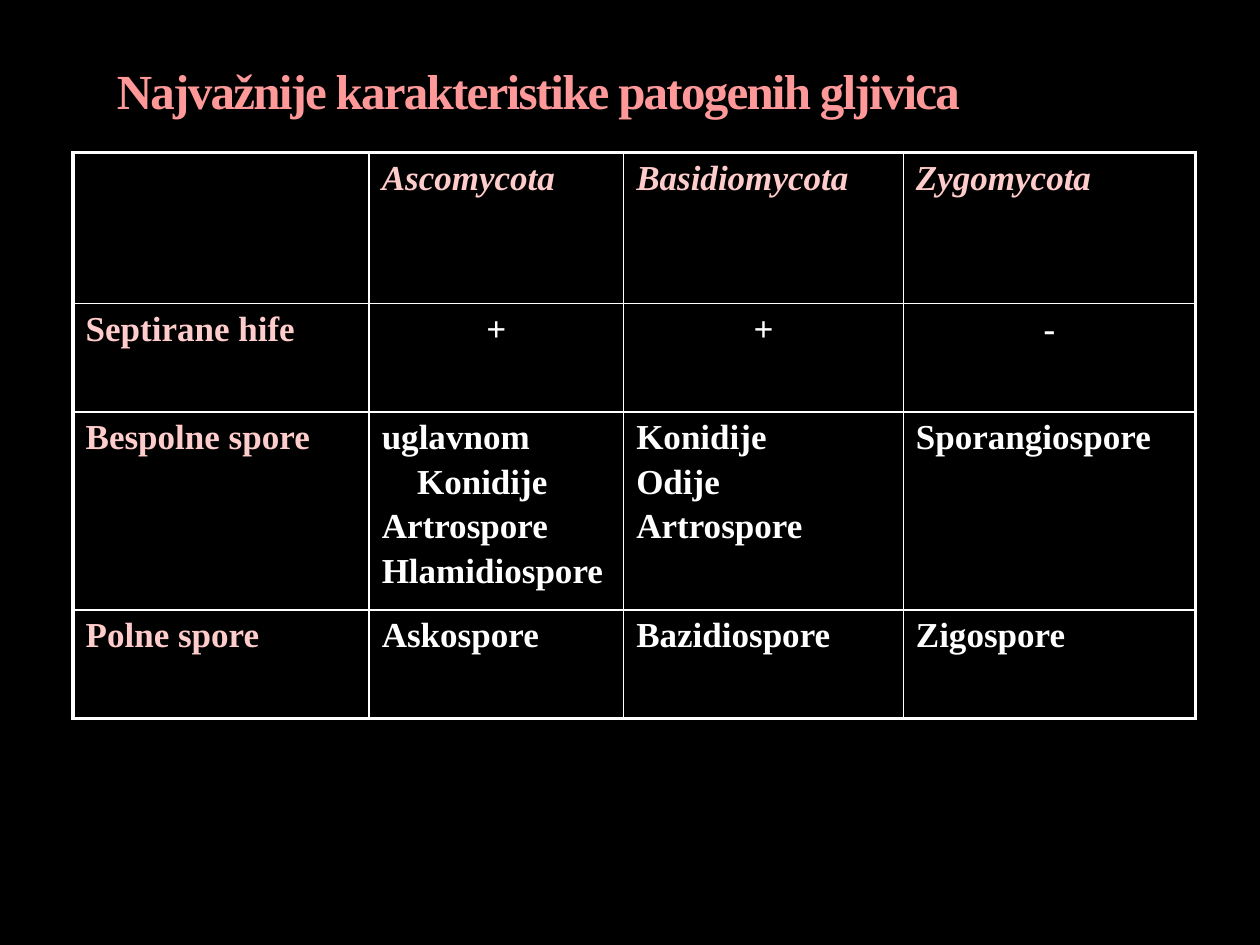
from dataclasses import dataclass

from lxml import etree
from pptx import Presentation
from pptx.dml.color import RGBColor
from pptx.enum.text import MSO_ANCHOR, PP_ALIGN
from pptx.oxml.ns import qn
from pptx.util import Inches, Pt

BLACK = RGBColor(0x00, 0x00, 0x00)
WHITE = RGBColor(0xFF, 0xFF, 0xFF)
PINK = RGBColor(0xFF, 0x99, 0x99)
PALE_PINK = RGBColor(0xFF, 0xCC, 0xCC)
LEFT, CENTER = PP_ALIGN.LEFT, PP_ALIGN.CENTER
BOTTOM = MSO_ANCHOR.BOTTOM

FONT = "Times New Roman"
INNER, OUTER = Pt(1), Pt(2.25)
COL_WIDTHS = (2.35, 2.02, 2.22, 2.32)
ROW_HEIGHTS = (1.2, 0.86, 1.42, 0.86)


@dataclass
class Line:
    text: str
    indent: float = 0


@dataclass
class Row:
    label: str
    cells: list[list[Line]]
    align: PP_ALIGN = LEFT


ROWS = [
    Row("", [[Line("Ascomycota")], [Line("Basidiomycota")], [Line("Zygomycota")]]),
    Row("Septirane hife", [[Line("+")], [Line("+")], [Line("-")]], CENTER),
    Row("Bespolne spore", [
        [Line("uglavnom"), Line("Konidije", 0.28), Line("Artrospore"), Line("Hlamidiospore")],
        [Line("Konidije"), Line("Odije"), Line("Artrospore")],
        [Line("Sporangiospore")],
    ]),
    Row("Polne spore", [[Line("Askospore")], [Line("Bazidiospore")], [Line("Zigospore")]]),
]


def set_font(p, size: float, color: RGBColor, italic: bool = False) -> None:
    p.font.name = FONT
    p.font.size = Pt(size)
    p.font.bold = True
    p.font.italic = italic
    p.font.color.rgb = color


def set_borders(cell, widths: dict[str, int]) -> None:
    """Add solid white borders ahead of the cell fill."""
    tc_pr = cell._tc.get_or_add_tcPr()
    for i, (side, width) in enumerate(widths.items()):
        ln = etree.Element(qn(f"a:ln{side}"), w=str(int(width)))
        fill = etree.SubElement(ln, qn("a:solidFill"))
        etree.SubElement(fill, qn("a:srgbClr"), val=str(WHITE))
        tc_pr.insert(i, ln)


def fill_cell(cell, lines: list[Line], color: RGBColor, align: PP_ALIGN, italic: bool) -> None:
    tf = cell.text_frame
    for i, line in enumerate(lines):
        p = tf.add_paragraph() if i else tf.paragraphs[0]
        p.text = line.text
        p.alignment = align
        if i:
            p.space_before = Pt(3.3)
        if line.indent:
            p._p.get_or_add_pPr().set("marL", str(Inches(line.indent)))
        set_font(p, 20, color, italic)


def add_title(s, text: str) -> None:
    sp = s.shapes.add_textbox(Inches(0.83), Inches(0.25), Inches(8.33), Inches(0.75))
    tf = sp.text_frame
    tf.word_wrap = True
    tf.vertical_anchor = BOTTOM
    p = tf.paragraphs[0]
    r = p.add_run()
    r.text = text
    set_font(p, 28, PINK)
    r.font._element.set("spc", "-100")  # letters 1 pt closer


def add_spore_table(s) -> None:
    sp = s.shapes.add_table(len(ROW_HEIGHTS), len(COL_WIDTHS), Inches(0.58), Inches(1.21),
                            Inches(sum(COL_WIDTHS)), Inches(sum(ROW_HEIGHTS)))
    table = sp.table
    table.first_row = table.horz_banding = False
    for col, width in zip(table.columns, COL_WIDTHS):
        col.width = Inches(width)
    for row, height in zip(table.rows, ROW_HEIGHTS):
        row.height = Inches(height)

    last_row, last_col = len(ROW_HEIGHTS) - 1, len(COL_WIDTHS) - 1
    for i, row in enumerate(ROWS):
        for j, lines in enumerate([[Line(row.label)], *row.cells]):
            cell = table.cell(i, j)
            cell.fill.background()
            color = PALE_PINK if i == 0 or j == 0 else WHITE
            fill_cell(cell, lines, color, row.align if j else LEFT, italic=i == 0)
            set_borders(cell, {
                "L": OUTER if j == 0 else INNER,
                "R": OUTER if j == last_col else INNER,
                "T": OUTER if i == 0 else INNER,
                "B": OUTER if i == last_row else INNER,
            })


def main() -> None:
    prs = Presentation()
    prs.slide_width, prs.slide_height = Inches(10), Inches(7.5)
    s = prs.slides.add_slide(prs.slide_layouts[6])

    # Background
    s.background.fill.solid()
    s.background.fill.fore_color.rgb = BLACK

    # Title and table
    add_title(s, "Najvažnije karakteristike patogenih gljivica")
    add_spore_table(s)
    prs.save("out.pptx")


if __name__ == "__main__":
    main()
